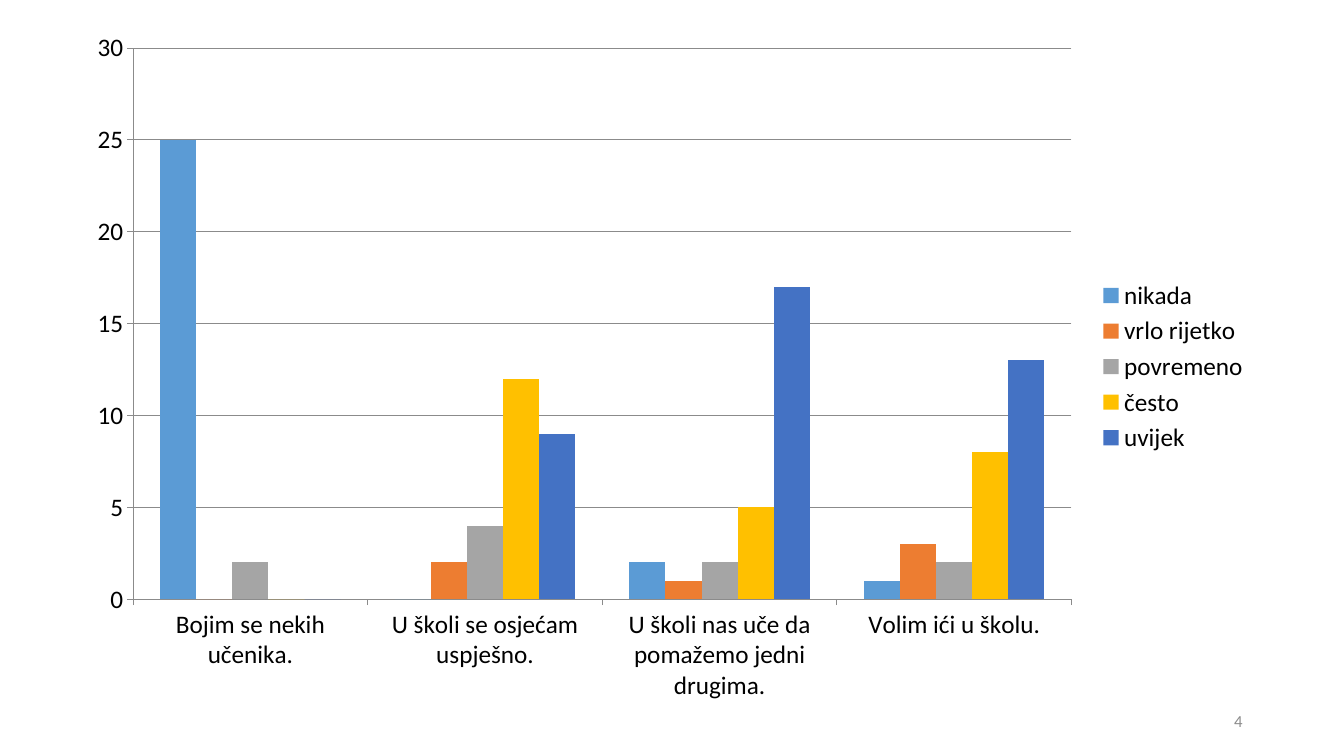
import pptx
import pptx.chart.data
import pptx.dml.color
import pptx.enum.chart
import pptx.enum.text
import pptx.util

SLIDE_WIDTH = pptx.util.Inches(13.33)
SLIDE_HEIGHT = pptx.util.Inches(7.5)
FONT = "Calibri"
BLANK_LAYOUT = 6

COLOURS = {
    "text": "000000",
    "lines": "8B8B8B",
    "page number": "8C8C8C",
    "nikada": "5B9BD5",
    "vrlo rijetko": "ED7D31",
    "povremeno": "A5A5A5",
    "često": "FFC000",
    "uvijek": "4472C4",
}

STATEMENTS = [
    "Bojim se nekih učenika.",
    "U školi se osjećam uspješno.",
    "U školi nas uče da pomažemo jedni drugima.",
    "Volim ići u školu.",
]

ANSWERS = {
    "nikada": (25, 0, 2, 1),
    "vrlo rijetko": (0, 2, 1, 3),
    "povremeno": (2, 4, 2, 2),
    "često": (0, 12, 5, 8),
    "uvijek": (0, 9, 17, 13),
}


def colour(name):
    return pptx.dml.color.RGBColor.from_string(COLOURS[name])


def area(left, top, width, height):
    """Turn shares of the slide's size into lengths."""
    return (int(left * SLIDE_WIDTH), int(top * SLIDE_HEIGHT),
            int(width * SLIDE_WIDTH), int(height * SLIDE_HEIGHT))


def style_font(font, size, colour_name):
    font.name = FONT
    font.size = pptx.util.Pt(size)
    font.color.rgb = colour(colour_name)


def style_line(line):
    line.color.rgb = colour("lines")
    line.width = pptx.util.Pt(0.75)


def style_axes(chart):
    for axis in (chart.category_axis, chart.value_axis):
        axis.major_tick_mark = pptx.enum.chart.XL_TICK_MARK.OUTSIDE
        axis.minor_tick_mark = pptx.enum.chart.XL_TICK_MARK.NONE
        style_line(axis.format.line)
    scale = chart.value_axis
    scale.minimum_scale, scale.maximum_scale, scale.major_unit = 0, 30, 5
    scale.has_major_gridlines = True
    style_line(scale.major_gridlines.format.line)


def add_survey_chart(slide, place):
    survey = pptx.chart.data.CategoryChartData()
    survey.categories = STATEMENTS
    for answer, counts in ANSWERS.items():
        survey.add_series(answer, counts)
    chart = slide.shapes.add_chart(
        pptx.enum.chart.XL_CHART_TYPE.COLUMN_CLUSTERED, *place, survey).chart
    chart.has_title = False
    style_font(chart.font, 18, "text")
    style_axes(chart)

    chart.has_legend = True
    chart.legend.position = pptx.enum.chart.XL_LEGEND_POSITION.RIGHT
    chart.legend.include_in_layout = False

    columns = chart.plots[0]
    columns.gap_width = 150
    columns.overlap = 0
    columns.vary_by_categories = False
    for answer in columns.series:
        answer.format.fill.solid()
        answer.format.fill.fore_color.rgb = colour(answer.name)
        answer.invert_if_negative = False


def add_page_number(slide, place, number):
    frame = slide.shapes.add_textbox(*place).text_frame
    frame.word_wrap = True
    frame.vertical_anchor = pptx.enum.text.MSO_ANCHOR.MIDDLE
    line = frame.paragraphs[0]
    line.alignment = pptx.enum.text.PP_ALIGN.RIGHT
    digits = line.add_run()
    digits.text = str(number)
    style_font(digits.font, 12, "page number")


def main():
    deck = pptx.Presentation()
    deck.slide_width = SLIDE_WIDTH
    deck.slide_height = SLIDE_HEIGHT
    slide = deck.slides.add_slide(deck.slide_layouts[BLANK_LAYOUT])
    add_survey_chart(slide, area(0.055, 0.025, 0.882, 0.92))
    add_page_number(slide, area(0.707, 0.927, 0.225, 0.053), 4)
    deck.save("out.pptx")


if __name__ == "__main__":
    main()
